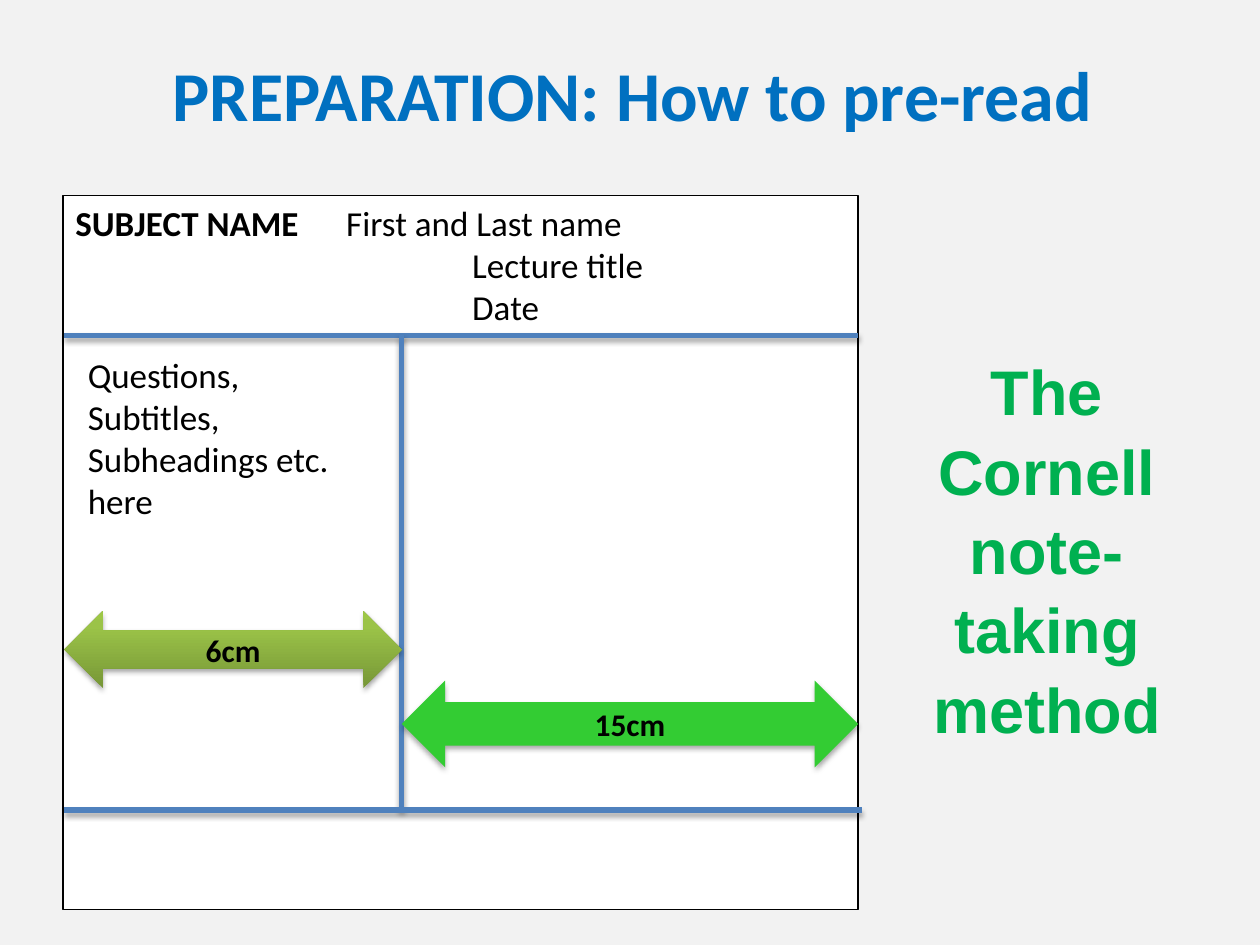
from copy import deepcopy
from lxml.etree import SubElement
from pptx import Presentation
from pptx.dml.color import RGBColor
from pptx.enum.shapes import MSO_CONNECTOR, MSO_SHAPE
from pptx.enum.text import MSO_ANCHOR, PP_ALIGN
from pptx.oxml.ns import qn
from pptx.util import Cm, Pt

BLACK = RGBColor(0x00, 0x00, 0x00)
WHITE = RGBColor(0xFF, 0xFF, 0xFF)
GREY = RGBColor(0xF2, 0xF2, 0xF2)
TITLE_BLUE = RGBColor(0x00, 0x70, 0xC0)
RULE_BLUE = RGBColor(0x4F, 0x81, 0xBD)
METHOD_GREEN = RGBColor(0x00, 0xB0, 0x50)
ARROW_GREEN = RGBColor(0x33, 0xCC, 0x33)
OLIVE = [
    (0, RGBColor(0x77, 0x97, 0x37)),
    (0.8, RGBColor(0x9B, 0xC3, 0x48)),
    (1, RGBColor(0x9D, 0xC7, 0x46)),
]


def add_run(p, text, size, color, bold=False, font="Calibri"):
    r = p.add_run()
    r.text = text
    r.font.name = font
    r.font.size = Pt(size)
    r.font.bold = bold
    r.font.color.rgb = color


def add_shadow(sp):
    effects = SubElement(sp._element.spPr, qn("a:effectLst"))
    shadow = SubElement(effects, qn("a:outerShdw"), blurRad=str(Pt(3.1)),
                        dist=str(Pt(1.8)), dir="5400000", rotWithShape="0")
    color = SubElement(shadow, qn("a:srgbClr"), val=str(BLACK))
    SubElement(color, qn("a:alpha"), val="35000")


prs = Presentation()
prs.slide_width, prs.slide_height = Cm(25.4), Cm(19.05)
s = prs.slides.add_slide(prs.slide_layouts[6])
s.background.fill.solid()
s.background.fill.fore_color.rgb = GREY

left, split, right = 1.3, 8.1, 17.3
top_rule, bottom_rule = 6.76, 16.33

tf = s.shapes.add_textbox(Cm(1.32), Cm(0.74), Cm(22.86), Cm(2.31)).text_frame
tf.word_wrap = True
tf.vertical_anchor = MSO_ANCHOR.MIDDLE
p = tf.paragraphs[0]
p.alignment = PP_ALIGN.CENTER
add_run(p, "PREPARATION: How to pre-read", 40, TITLE_BLUE, True)

sheet = s.shapes.add_shape(MSO_SHAPE.RECTANGLE, Cm(1.27), Cm(3.94), Cm(16.03), Cm(14.4))
sheet.shadow.inherit = False
sheet.fill.solid()
sheet.fill.fore_color.rgb = WHITE
sheet.line.color.rgb = BLACK
sheet.line.width = Pt(0.75)
tf = sheet.text_frame
tf.vertical_anchor = MSO_ANCHOR.TOP
p = tf.paragraphs[0]
p.alignment = PP_ALIGN.LEFT
tabs = SubElement(p._p.get_or_add_pPr(), qn("a:tabLst"))
SubElement(tabs, qn("a:tab"), pos=str(Cm(5.46)), algn="l")
add_run(p, "SUBJECT NAME", 20, BLACK, True)
add_run(p, "\tFirst and Last name", 20, BLACK)
for text in ("Lecture title", "Date"):
    p = tf.add_paragraph()
    p.alignment = PP_ALIGN.LEFT
    p._p.get_or_add_pPr().set("marL", str(Cm(8)))
    add_run(p, text, 20, BLACK)

tf = s.shapes.add_textbox(Cm(17.5), Cm(3.96), Cm(7.21), Cm(14.15)).text_frame
tf.word_wrap = True
tf.vertical_anchor = MSO_ANCHOR.MIDDLE
p = tf.paragraphs[0]
p.alignment = PP_ALIGN.CENTER
p.space_before = Pt(7)
p.line_spacing = 1.05
add_run(p, "The Cornell note-taking method", 36, METHOD_GREEN, True, "Arial")

for x1, y1, x2, y2 in (
    (left, top_rule, right, top_rule),
    (split, top_rule, split, bottom_rule),
    (left, bottom_rule, 17.37, bottom_rule),
):
    rule = s.shapes.add_connector(MSO_CONNECTOR.STRAIGHT, Cm(x1), Cm(y1), Cm(x2), Cm(y2))
    rule.line.color.rgb = RULE_BLUE
    rule.line.width = Pt(3)
    add_shadow(rule)

tf = s.shapes.add_textbox(Cm(1.47), Cm(7.01), Cm(6.35), Cm(3.76)).text_frame
tf.word_wrap = True
tf.margin_left, tf.margin_right = Cm(0.3), Cm(0)
for i, text in enumerate(("Questions,", "Subtitles,", "Subheadings etc.", "here")):
    p = tf.add_paragraph() if i else tf.paragraphs[0]
    add_run(p, text, 20, BLACK)

for text, x1, x2, y, height, stops in (
    ("6cm", left, split, 12.32, 1.55, OLIVE),
    ("15cm", split, right, 13.72, 1.75, None),
):
    arrow = s.shapes.add_shape(MSO_SHAPE.LEFT_RIGHT_ARROW, Cm(x1), Cm(y), Cm(x2 - x1), Cm(height))
    if stops:
        arrow.fill.gradient()
        arrow.fill.gradient_angle = 90
        gs_list = arrow._element.spPr.find(".//" + qn("a:gsLst"))
        gs_list.append(deepcopy(gs_list[-1]))
        for stop, (position, color) in zip(arrow.fill.gradient_stops, stops):
            stop.position = position
            stop.color.rgb = color
    else:
        arrow.fill.solid()
        arrow.fill.fore_color.rgb = ARROW_GREEN
    arrow.line.fill.background()
    add_shadow(arrow)
    tf = arrow.text_frame
    tf.vertical_anchor = MSO_ANCHOR.MIDDLE
    p = tf.paragraphs[0]
    p.alignment = PP_ALIGN.CENTER
    add_run(p, text, 18, BLACK, True)

prs.save("out.pptx")
